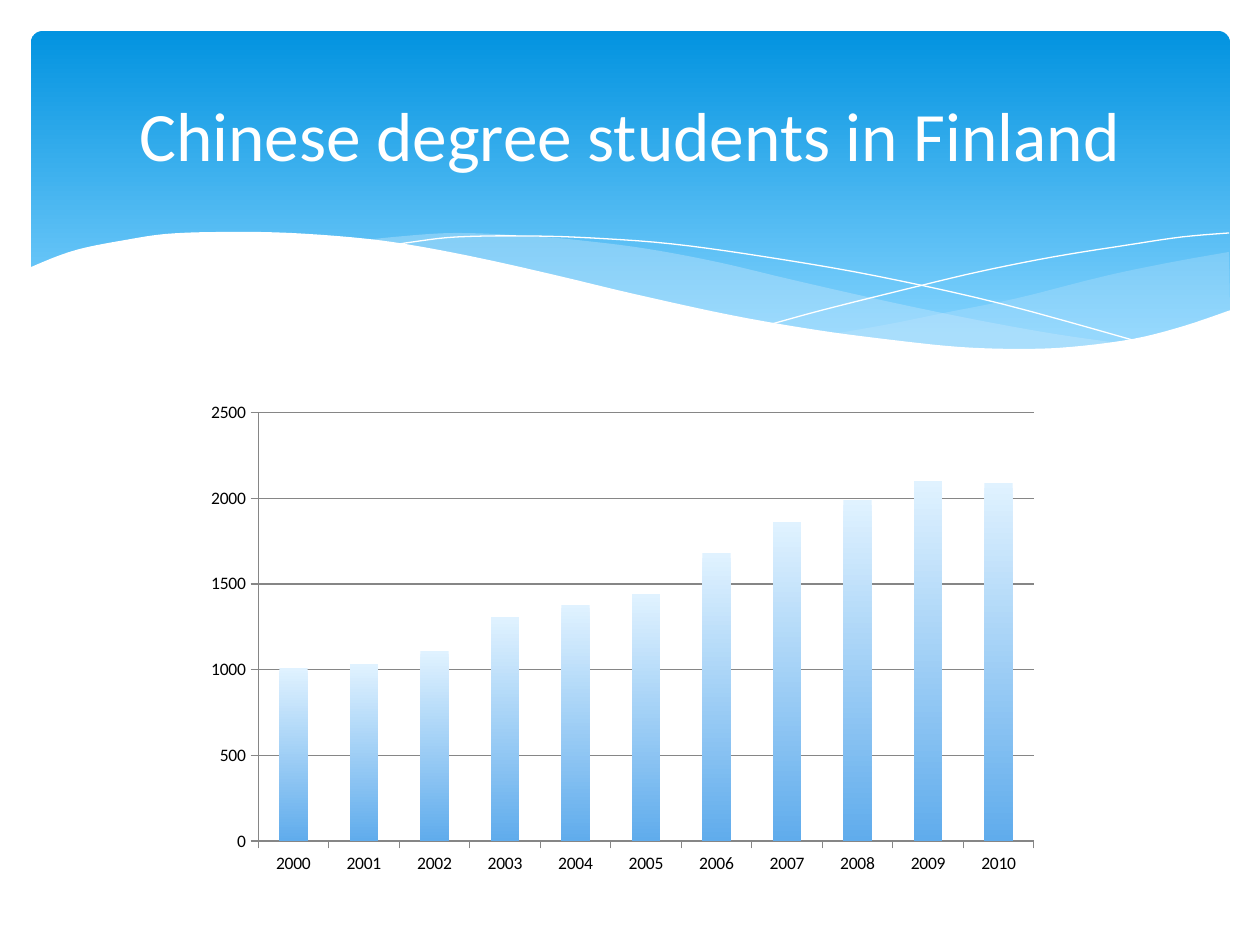
import pptx
import pptx.chart.data
import pptx.dml.color
import pptx.enum.chart
import pptx.enum.shapes
import pptx.enum.text
import pptx.oxml.ns
import pptx.oxml.xmlchemy
import pptx.util

PX = 914400 / 126
FONT = "Calibri"

SWELL_RIGHT_TOP = [(620, 20), (569, 29), (514, 40), (476, 49), (405, 67),
                   (340, 80), (281, 92), (224, 102)]
SWELL_RIGHT_BOTTOM = [(224, 102), (279, 109), (345, 116), (417, 118), (478, 115),
                      (531, 107), (578, 94), (621, 79)]
SWELL_LEFT_TOP = [(867, 112), (797, 102), (719, 88), (632, 70), (535, 48), (459, 30),
                  (390, 17), (328, 9), (271, 4), (197, 1), (136, 5), (102, 9)]
SWELL_LEFT_BOTTOM = [(102, 9), (173, 19), (251, 34), (308, 48), (410, 70), (499, 89),
                     (599, 106), (684, 116), (759, 118), (822, 117), (867, 112)]
FALLING_LINE = [(131, 14), (155, 10), (199, 5), (267, 4), (333, 6), (414, 12),
                (508, 25), (618, 44), (744, 72), (885, 111)]
RISING_LINE = [(514, 92), (565, 78), (649, 57), (720, 40), (795, 25), (870, 13),
               (924, 5), (971, 1)]
WHITE_EDGE = [(1202, 78), (1155, 94), (1104, 107), (1042, 115), (990, 117), (930, 115),
              (863, 108), (787, 98), (701, 83), (605, 62), (534, 45), (464, 29), (399, 16),
              (339, 7), (261, 1), (194, 0), (137, 2), (91, 9), (55, 16), (29, 24), (0, 36)]

STUDENTS = {"2000": 1010, "2001": 1030, "2002": 1110, "2003": 1310, "2004": 1380,
            "2005": 1440, "2006": 1680, "2007": 1860, "2008": 1990, "2009": 2100,
            "2010": 2090}


def px(length):
    """Turn a length in px into EMU."""
    return pptx.util.Emu(round(length * PX))


def color(hex_string):
    """Turn a hex string into a colour."""
    return pptx.dml.color.RGBColor.from_string(hex_string)


def paint_gradient(fill, top, bottom, end=1.0):
    """Fill from a top colour down to a bottom colour."""
    fill.gradient()
    fill.gradient_angle = 270
    for stop, hex_string, position in zip(fill.gradient_stops, (top, bottom), (0, end)):
        stop.color.rgb = color(hex_string)
        stop.position = position


def smooth(knots, steps=5):
    """Return points on a Catmull-Rom curve through the knots."""
    padded = [knots[0], *knots, knots[-1]]
    points = [knots[0]]
    for a, b, c, d in zip(padded, padded[1:], padded[2:], padded[3:]):
        for step in range(1, steps + 1):
            t = step / steps
            points.append(tuple(
                (2 * q + (r - p) * t + (2 * p - 5 * q + 4 * r - s) * t ** 2
                 + (3 * q - p - 3 * r + s) * t ** 3) / 2
                for p, q, r, s in zip(a, b, c, d)))
    return points


def add_outline(slide, left, top, points, close):
    """Add a freeform through points measured from the left and top."""
    outline = [(px(left + x), px(top + y)) for x, y in points]
    builder = slide.shapes.build_freeform(*outline[0])
    builder.add_line_segments(outline[1:], close=close)
    shape = builder.convert_to_shape()
    shape.shadow.inherit = False
    return shape


def add_area(slide, left, top, points, hex_string, opacity=100):
    """Add a filled outline without a line."""
    shape = add_outline(slide, left, top, points, True)
    shape.fill.solid()
    shape.fill.fore_color.rgb = color(hex_string)
    shape.line.fill.background()
    if opacity < 100:
        value = shape._element.spPr.find(".//" + pptx.oxml.ns.qn("a:srgbClr"))
        alpha = pptx.oxml.xmlchemy.OxmlElement("a:alpha")
        alpha.set("val", str(opacity * 1000))
        value.append(alpha)


def add_curve(slide, left, top, points):
    """Add a white hairline curve."""
    shape = add_outline(slide, left, top, points, False)
    shape.fill.background()
    shape.line.color.rgb = color("FFFFFF")
    shape.line.width = 0


def add_banner(slide, left, top, width, height):
    """Add the blue panel."""
    panel = slide.shapes.add_shape(pptx.enum.shapes.MSO_SHAPE.ROUNDED_RECTANGLE,
                                   px(left), px(top), px(width), px(height))
    panel.adjustments[0] = 0.034
    panel.shadow.inherit = False
    panel.line.fill.background()
    paint_gradient(panel.fill, "0293E0", "83D3FE", 0.9)


def add_waves(slide, left, top, width, height):
    """Add the pale swells, the hairlines and the white wave below them."""
    add_area(slide, left + 580, top, smooth(SWELL_RIGHT_TOP) + smooth(SWELL_RIGHT_BOTTOM),
             "C6E7FC", 29)
    add_area(slide, left + 229, top, smooth(SWELL_LEFT_TOP) + smooth(SWELL_LEFT_BOTTOM),
             "C6E7FC", 40)
    for knots in (FALLING_LINE, RISING_LINE):
        add_curve(slide, left + 229, top, smooth(knots))
    add_area(slide, left, top, smooth(WHITE_EDGE) + [(0, height), (width, height)], "FFFFFF")


def add_title(slide, left, top, width, height):
    """Add the centred white title."""
    frame = slide.shapes.add_textbox(px(left), px(top), px(width), px(height)).text_frame
    frame.word_wrap = True
    frame.vertical_anchor = pptx.enum.text.MSO_ANCHOR.MIDDLE
    frame.text = "Chinese degree students in Finland"
    paragraph = frame.paragraphs[0]
    paragraph.alignment = pptx.enum.text.PP_ALIGN.CENTER
    font = paragraph.runs[0].font
    font.name = FONT
    font.size = pptx.util.Pt(39.6)
    font.color.rgb = color("FFFFFF")


def add_student_chart(slide, left, top, width, height):
    """Add the column chart of students by year."""
    data = pptx.chart.data.CategoryChartData()
    data.categories = list(STUDENTS)
    data.add_series("Series 1", list(STUDENTS.values()))
    chart = slide.shapes.add_chart(pptx.enum.chart.XL_CHART_TYPE.COLUMN_STACKED,
                                   px(left), px(top), px(width), px(height), data).chart
    chart.has_legend = False
    chart.has_title = False
    chart.font.name = FONT
    chart.font.size = pptx.util.Pt(10)
    chart.font.color.rgb = color("000000")
    plot = chart.plots[0]
    plot.vary_by_categories = False
    plot.gap_width = 150
    plot.overlap = 100
    paint_gradient(plot.series[0].format.fill, "E0F2FF", "60ACEC")
    value_axis = chart.value_axis
    value_axis.minimum_scale = 0
    value_axis.maximum_scale = 2500
    value_axis.major_unit = 500
    value_axis.has_major_gridlines = True
    for axis in (chart.category_axis, value_axis):
        axis.major_tick_mark = pptx.enum.chart.XL_TICK_MARK.OUTSIDE
    for line in (chart.category_axis.format.line, value_axis.format.line,
                 value_axis.major_gridlines.format.line):
        line.color.rgb = color("868686")
        line.width = pptx.util.Pt(0.75)


def main():
    """Build and save the presentation."""
    presentation = pptx.Presentation()
    presentation.slide_width = px(1260)
    presentation.slide_height = px(945)
    slide = presentation.slides.add_slide(presentation.slide_layouts[6])
    add_banner(slide, 31, 31, 1199, 340)
    add_waves(slide, 29, 232, 1202, 183)
    add_title(slide, 63, 47, 1134, 173)
    add_student_chart(slide, 194, 393, 857, 490)
    presentation.save("out.pptx")


if __name__ == "__main__":
    main()
